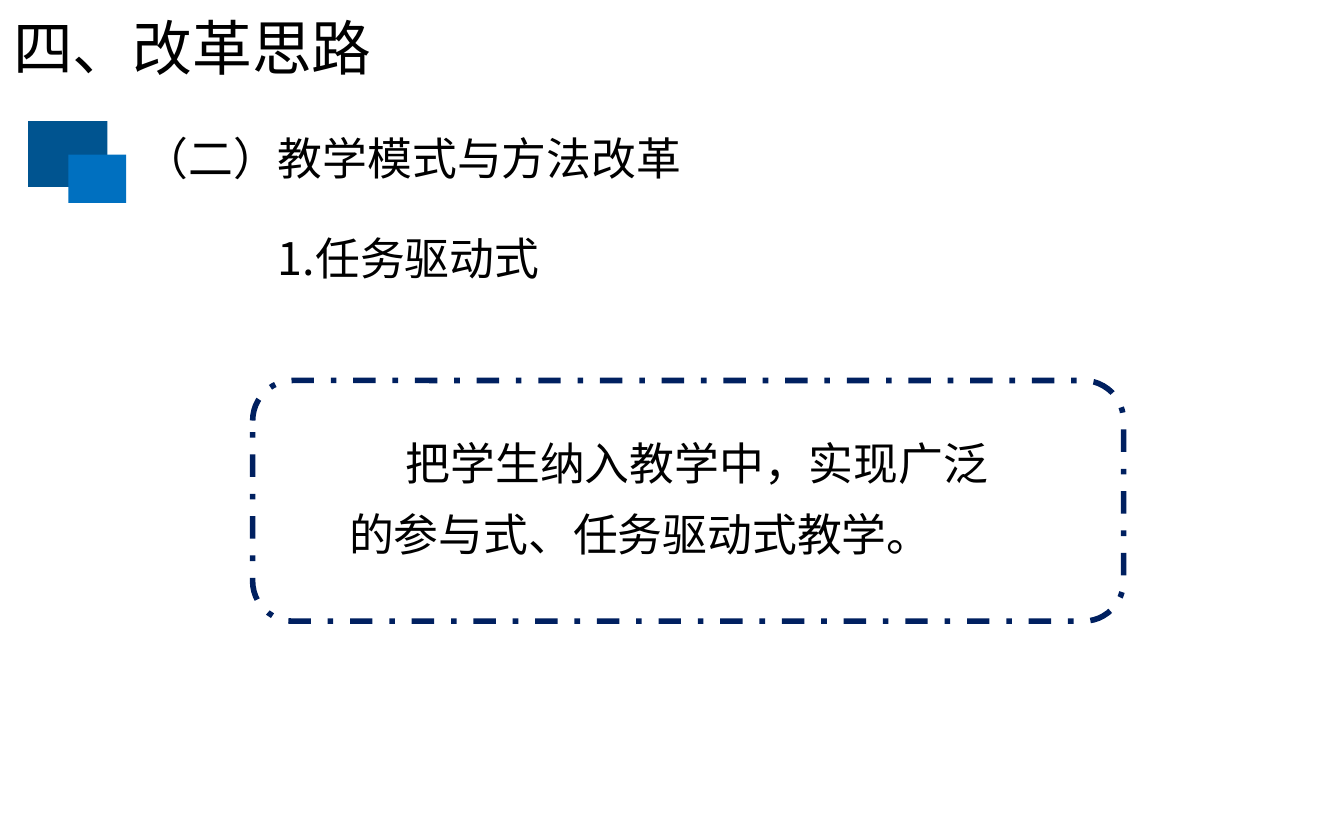
from lxml import etree
from pptx import Presentation
from pptx.dml.color import RGBColor
from pptx.enum import dml, shapes, text
from pptx.oxml.ns import qn
from pptx.util import Inches, Pt

FACE = "Noto Sans CJK SC"
KIND = shapes.MSO_SHAPE
GROW = {"auto_size": text.MSO_AUTO_SIZE.SHAPE_TO_FIT_TEXT}


def paint(color, value):
    """Set a colour format from a hex string."""
    color.rgb = RGBColor.from_string(value)


def apply(target, values):
    """Set attributes from a dict of format values."""
    for name, value in values.items():
        setattr(target, name, value)


def write(parent, box, words, size=24, margin=0, indent=0, frame=None, para=None):
    """Add a text box with one paragraph."""
    tf = parent.add_textbox(*map(Inches, box)).text_frame
    apply(tf, {"word_wrap": True, **(frame or {})})
    line = tf.paragraphs[0]
    apply(line, para or {})
    props = line._p.get_or_add_pPr()
    props.set("marL", str(Inches(margin)))
    props.set("indent", str(Inches(indent)))
    run = line.add_run()
    run.text = words
    apply(run.font, {"size": Pt(size), "name": FACE})
    paint(run.font.color, "000000")
    east = etree.SubElement(run._r.get_or_add_rPr(), qn("a:ea"))
    east.set("typeface", FACE)


def block(parent, kind, box, fill=None, edge=None):
    """Add a plain shape with either a fill or a dashed outline."""
    shape = parent.add_shape(kind, *map(Inches, box))
    shape.shadow.inherit = False
    if fill:
        shape.fill.solid()
        paint(shape.fill.fore_color, fill)
    else:
        shape.fill.background()
    if edge:
        paint(shape.line.color, edge)
        apply(shape.line, {"width": Pt(3), "dash_style": dml.MSO_LINE.DASH_DOT})
    else:
        shape.line.fill.background()


def panel(parent, box):
    """Place the dashed panel and its statement."""
    x, y, w, h = box
    write(parent, (x + 0.62, y + 0.23, w - 1.21, 1.11),
          "把学生纳入教学中，实现广泛的参与式、任务驱动式教学。",
          indent=0.42, frame=GROW, para={"line_spacing": Pt(38)})
    block(parent, KIND.ROUNDED_RECTANGLE, box, edge="002060")


def title(parent, box):
    """Place the slide title."""
    write(parent, box, "四、改革思路", size=32,
          frame={"vertical_anchor": text.MSO_ANCHOR.MIDDLE})


def heading(parent, box):
    """Place the section heading with its two overlapping squares."""
    x, y, w, h = box
    group = parent.add_group_shape().shapes
    write(group, (x + 0.76, y + 0.02, w - 0.76, 0.5), "（二）教学模式与方法改革",
          margin=0.39, indent=-0.39, frame={**GROW, "word_wrap": False})
    block(group, KIND.RECTANGLE, (x, y, 0.59, 0.49), "005490")
    block(group, KIND.RECTANGLE, (x + 0.3, y + 0.25, 0.43, h - 0.25), "0070C0")


def topic(parent, box):
    """Place the numbered topic line."""
    write(parent, box, "1.任务驱动式", indent=0.42, frame=GROW)


def main():
    """Build and save the slide."""
    deck = Presentation()
    apply(deck, {"slide_width": Inches(10), "slide_height": Inches(6.24)})
    parts = deck.slides.add_slide(deck.slide_layouts[6]).shapes
    panel(parts, (1.88, 2.83, 6.48, 1.79))
    title(parts, (0, 0, 4.48, 0.69))
    heading(parts, (0.21, 0.9, 5, 0.61))
    topic(parts, (1.55, 1.67, 7.66, 0.5))
    deck.save("out.pptx")


if __name__ == "__main__":
    main()
